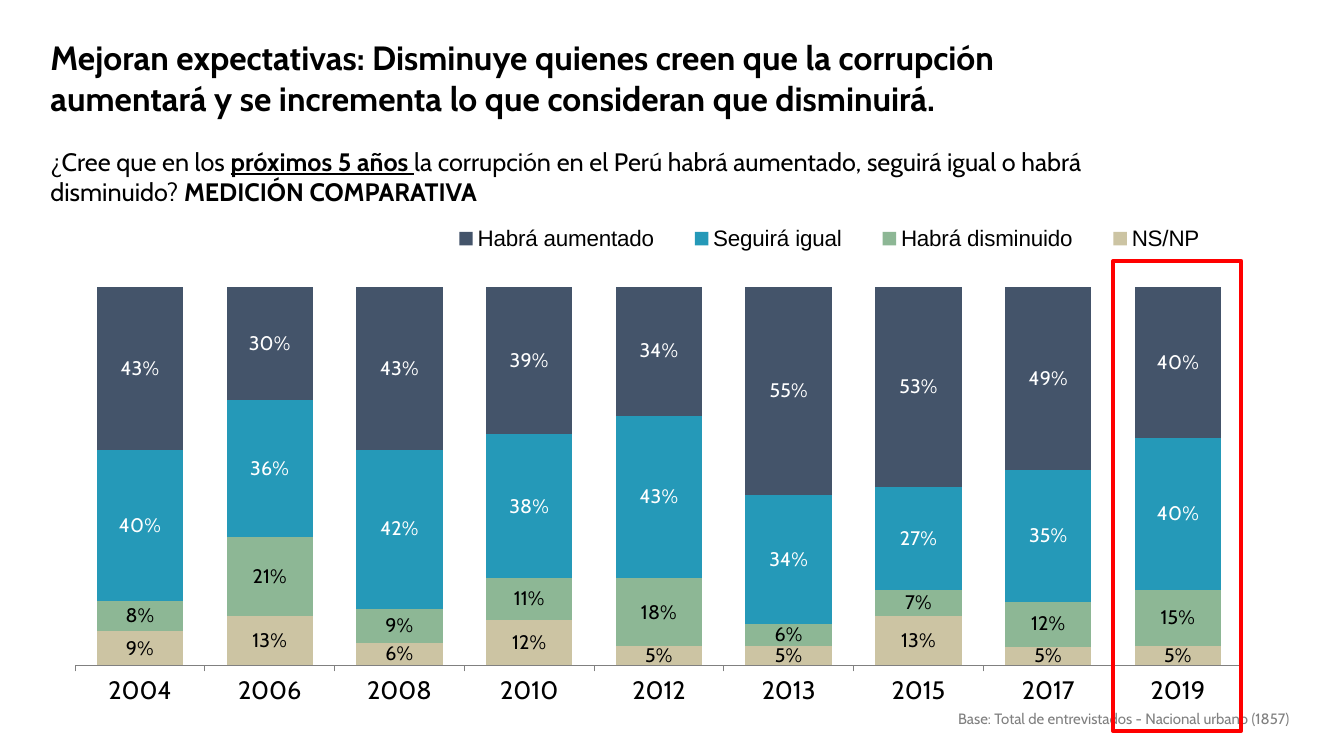
from dataclasses import dataclass

from lxml import etree
from pptx import Presentation
from pptx.chart.data import CategoryChartData
from pptx.dml.color import RGBColor
from pptx.enum.chart import XL_CHART_TYPE, XL_LEGEND_POSITION, XL_TICK_MARK
from pptx.enum.shapes import MSO_SHAPE
from pptx.enum.text import MSO_ANCHOR, MSO_AUTO_SIZE, PP_ALIGN
from pptx.oxml.ns import qn
from pptx.util import Pt

STACKED = XL_CHART_TYPE.COLUMN_STACKED_100
RIGHT_LEGEND = XL_LEGEND_POSITION.RIGHT
TICK_OUTSIDE, TICK_NONE = XL_TICK_MARK.OUTSIDE, XL_TICK_MARK.NONE
RECTANGLE = MSO_SHAPE.RECTANGLE
TOP = MSO_ANCHOR.TOP
NO_AUTOFIT = MSO_AUTO_SIZE.NONE
LEFT, RIGHT = PP_ALIGN.LEFT, PP_ALIGN.RIGHT

EMU_PER_PX = 9144  # 100 px to the inch


@dataclass(frozen=True)
class Theme:
    text_font: str = "Cabin"
    legend_font: str = "Arial"
    black: str = "000000"
    white: str = "FFFFFF"
    grey: str = "808080"
    highlight: str = "FF0000"
    sand: str = "CCC4A3"
    green: str = "8DB795"
    blue: str = "2599B8"
    navy: str = "44546A"
    title_size: float = 24
    body_size: float = 18
    legend_size: float = 16
    label_size: float = 14
    note_size: float = 10.7


THEME = Theme()

TITLE = ("Mejoran expectativas: Disminuye quienes creen que la corrupción "
         "aumentará y se incrementa lo que consideran que disminuirá.")
QUESTION = [
    ("¿Cree que en los ", {}),
    ("próximos 5 años ", {"bold": True, "underline": True}),
    ("la corrupción en el Perú habrá aumentado, seguirá igual o habrá disminuido? ", {}),
    ("MEDICIÓN COMPARATIVA", {"bold": True}),
]
BASE_NOTE = "Base: Total de entrevistados - Nacional urbano (1857)"

YEARS = ["2004", "2006", "2008", "2010", "2012", "2013", "2015", "2017", "2019"]
# answer, percentages by year, fill colour, label colour
ANSWERS = [
    ("NS/NP", [9, 13, 6, 12, 5, 5, 13, 5, 5], THEME.sand, THEME.black),
    ("Habrá disminuido", [8, 21, 9, 11, 18, 6, 7, 12, 15], THEME.green, THEME.black),
    ("Seguirá igual", [40, 36, 42, 38, 43, 34, 27, 35, 40], THEME.blue, THEME.white),
    ("Habrá aumentado", [43, 30, 43, 39, 34, 55, 53, 49, 40], THEME.navy, THEME.white),
]


def px(*lengths):
    return [length * EMU_PER_PX for length in lengths]


def set_attributes(target, values):
    for name, value in values.items():
        setattr(target, name, value)


def format_font(font, size, color=THEME.black, name=THEME.text_font, **values):
    set_attributes(font, {"name": name, "size": Pt(size), **values})
    font.color.rgb = RGBColor.from_string(color)


def place(box, left, top, width, height):
    names = ("left", "top", "width", "height")
    set_attributes(box, dict(zip(names, px(left, top, width, height))))


def write_text(box, spans, size, color=THEME.black, align=LEFT, line_spacing=1.0):
    """Fill a box with one paragraph of (text, font values) spans."""
    frame = box.text_frame
    set_attributes(frame, {"word_wrap": True, "auto_size": NO_AUTOFIT,
                           "vertical_anchor": TOP})
    para = frame.paragraphs[0]
    set_attributes(para, {"alignment": align, "line_spacing": line_spacing,
                          "space_before": Pt(0)})
    for text, values in spans:
        span = para.add_run()
        span.text = text
        format_font(span.font, size, color, **values)
    return para


def remove_bullet(para):
    properties = para._p.get_or_add_pPr()
    properties.set("marL", "0")
    properties.set("indent", "0")
    etree.SubElement(properties, qn("a:buNone"))


def build_layout(left, top, width, height, inner=False):
    """Return a manual chart layout, in fractions of the chart's size."""
    layout = etree.Element(qn("c:layout"))
    manual = etree.SubElement(layout, qn("c:manualLayout"))
    values = {"xMode": "edge", "yMode": "edge",
              "x": left, "y": top, "w": width, "h": height}
    if inner:
        values = {"layoutTarget": "inner", **values}
    for name, value in values.items():
        etree.SubElement(manual, qn(f"c:{name}")).set("val", str(value))
    return layout


def drop_layout(element):
    for layout in element.findall(qn("c:layout")):
        element.remove(layout)


def format_axes(chart):
    years = chart.category_axis
    set_attributes(years, {"major_tick_mark": TICK_OUTSIDE, "minor_tick_mark": TICK_NONE,
                           "has_major_gridlines": False})
    format_font(years.tick_labels.font, THEME.body_size)
    years.format.line.color.rgb = RGBColor.from_string(THEME.grey)
    years.format.line.width = Pt(0.75)
    set_attributes(chart.value_axis, {"visible": False, "has_major_gridlines": False,
                                      "minimum_scale": 0, "maximum_scale": 1})


def format_legend(chart):
    chart.has_legend = True
    legend = chart.legend
    set_attributes(legend, {"position": RIGHT_LEGEND, "include_in_layout": False})
    format_font(legend.font, THEME.legend_size, name=THEME.legend_font)
    element = legend._element
    drop_layout(element)
    element.find(qn("c:overlay")).addprevious(build_layout(0.35, 0.08, 0.63, 0.08))


def format_series(series, fill_color, label_color):
    series.format.fill.solid()
    series.format.fill.fore_color.rgb = RGBColor.from_string(fill_color)
    labels = series.data_labels
    set_attributes(labels, {"show_value": True, "number_format": "0%",
                            "number_format_is_linked": False})
    format_font(labels.font, THEME.label_size, label_color)


def add_answer_chart(page, left, top, width, height):
    data = CategoryChartData(number_format="0%")
    data.categories = YEARS
    for name, percentages, _, _ in ANSWERS:
        data.add_series(name, [value / 100 for value in percentages])
    chart = page.shapes.add_chart(STACKED, *px(left, top, width, height), data).chart
    chart.has_title = False
    format_font(chart.font, THEME.body_size, name=THEME.legend_font)
    plot = chart.plots[0]
    set_attributes(plot, {"gap_width": 50, "overlap": 100, "vary_by_categories": False})
    for series, (_, _, fill_color, label_color) in zip(plot.series, ANSWERS):
        format_series(series, fill_color, label_color)
    format_axes(chart)
    format_legend(chart)
    plot_area = chart._chartSpace.chart.plotArea
    drop_layout(plot_area)
    plot_area.insert(0, build_layout(0.076, 0.2, 0.912, 0.628, inner=True))


def add_highlight(page, left, top, width, height):
    frame = page.shapes.add_shape(RECTANGLE, *px(left, top, width, height))
    frame.shadow.inherit = False
    frame.fill.background()
    frame.line.color.rgb = RGBColor.from_string(THEME.highlight)
    frame.line.width = Pt(3)


def main():
    deck = Presentation()
    deck.slide_width, deck.slide_height = px(1333, 750)
    page = deck.slides.add_slide(deck.slide_layouts[1])
    title, question = page.placeholders

    place(title, 40, 32, 1007, 134)
    write_text(title, [(TITLE, {"bold": True})], THEME.title_size)

    place(question, 40, 140, 1047, 71)
    remove_bullet(write_text(question, QUESTION, THEME.body_size))

    note = page.shapes.add_textbox(*px(594, 701, 695, 26))
    write_text(note, [(BASE_NOTE, {})], THEME.note_size, THEME.grey, RIGHT, 0.9)

    add_answer_chart(page, -22, 165, 1270, 598)
    add_highlight(page, 1104, 259, 127, 466)
    deck.save("out.pptx")


if __name__ == "__main__":
    main()
